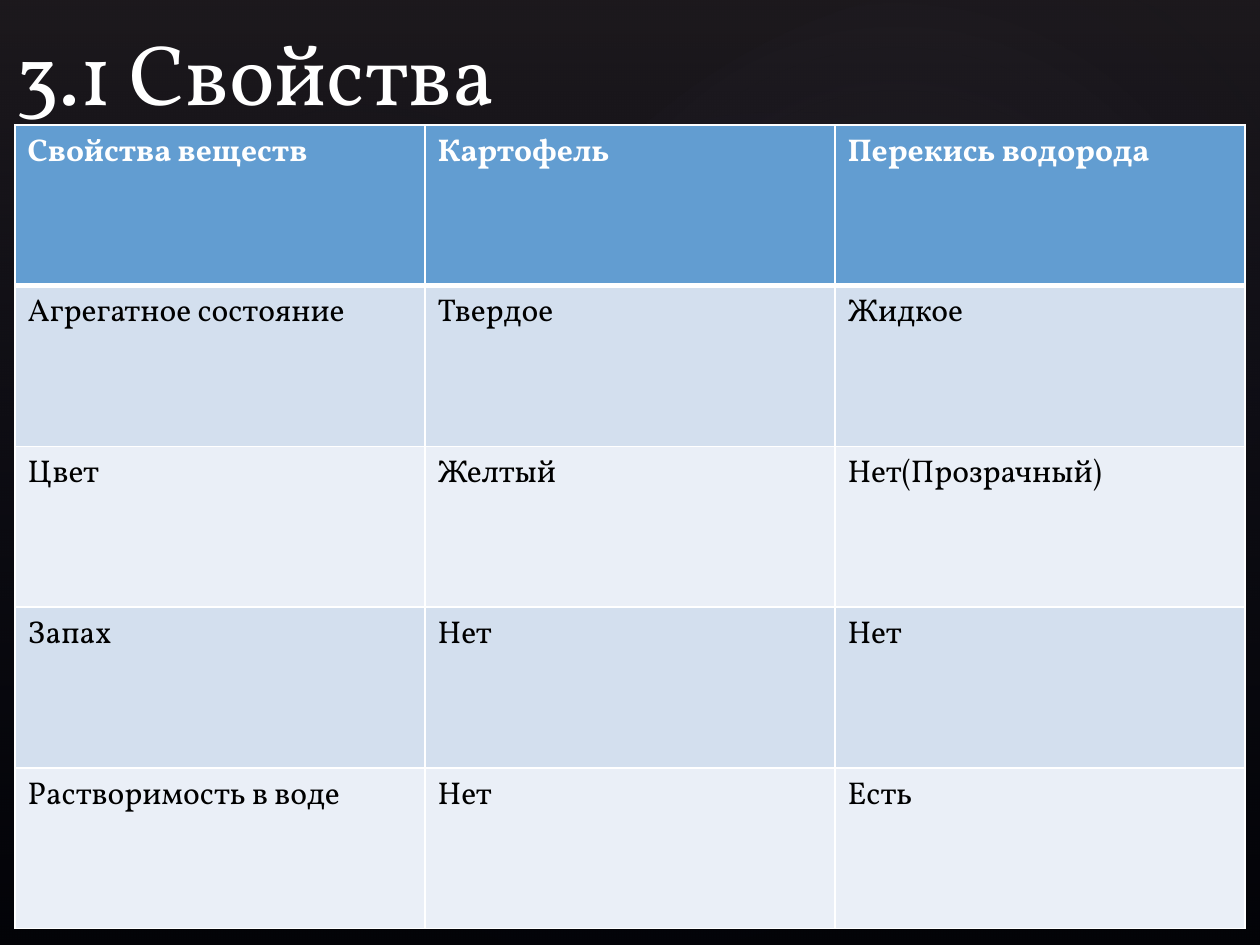
from lxml import etree
from pptx import Presentation
from pptx.dml.color import RGBColor
from pptx.enum.shapes import MSO_SHAPE
from pptx.enum.text import MSO_ANCHOR, MSO_AUTO_SIZE, PP_ALIGN
from pptx.oxml import parse_xml
from pptx.oxml.ns import nsdecls, qn
from pptx.util import Inches, Pt

FONT = "Vollkorn"
COLORS = {
    "background": "000000", "plum": "504652", "navy": "242852", "glow": "C4BCC6",
    "header": "629DD1", "odd": "D3DFEE", "even": "EAEFF7",
    "light": "FFFFFF", "dark": "000000",
}


def set_gradient(shape, stops, direction):
    """Fill a shape with (position %, colour, opacity %) stops."""
    stop_xml = "".join(
        f'<a:gs pos="{position * 1000}"><a:srgbClr val="{COLORS[color]}">'
        f'<a:alpha val="{opacity * 1000}"/></a:srgbClr></a:gs>'
        for position, color, opacity in stops)
    shape.shadow.inherit = False
    shape.line.fill.background()
    shape.fill.background()
    properties = shape.element.spPr
    properties.replace(properties.find(qn("a:noFill")), parse_xml(
        f'<a:gradFill {nsdecls("a")} rotWithShape="1"><a:gsLst>{stop_xml}</a:gsLst>'
        f'{direction}</a:gradFill>'))


def set_borders(cell, widths):
    """Give a cell white borders; widths in points for left, right, top, bottom."""
    properties = cell._tc.get_or_add_tcPr()
    for index, (side, width) in enumerate(zip("LRTB", widths)):
        border = etree.Element(qn(f"a:ln{side}"), w=str(Pt(width)))
        solid = etree.SubElement(border, qn("a:solidFill"))
        etree.SubElement(solid, qn("a:srgbClr"), val=COLORS["light"])
        properties.insert(index, border)


prs = Presentation()
prs.slide_width, prs.slide_height = Inches(10), Inches(7.5)
slide = prs.slides.add_slide(prs.slide_layouts[5])

# Background: dark vertical fade with soft glows
slide.background.fill.solid()
slide.background.fill.fore_color.rgb = RGBColor.from_string(COLORS["background"])
fade = slide.shapes.add_shape(MSO_SHAPE.RECTANGLE, 0, 0, prs.slide_width, prs.slide_height)
set_gradient(fade, [(0, "plum", 36), (100, "navy", 10)], '<a:lin ang="5400000" scaled="0"/>')

GLOWS = [
    (1.5, 1.14, 7.92, 6.24, 328.7, 7),
    (-0.3, 1.28, 6.06, 4.9, 294.3, 8),
    (3.58, 0.13, 7.09, 5.2, 328.7, 8),
]
for *box, rotation, opacity in GLOWS:
    glow = slide.shapes.add_shape(MSO_SHAPE.OVAL, *map(Inches, box))
    glow.rotation = rotation
    set_gradient(glow, [(0, "glow", opacity), (58, "navy", 0)],
                 '<a:path path="circle"><a:fillToRect l="50000" t="50000" r="50000" b="50000"/></a:path>')

# Table of properties
ROWS = [
    ("Свойства веществ", "Картофель", "Перекись водорода"),
    ("Агрегатное состояние", "Твердое", "Жидкое"),
    ("Цвет", "Желтый", "Нет(Прозрачный)"),
    ("Запах", "Нет", "Нет"),
    ("Растворимость в воде", "Нет", "Есть"),
]
properties_table = slide.shapes.add_table(
    len(ROWS), len(ROWS[0]), Inches(0.12), Inches(0.99), Inches(9.76), Inches(6.38)).table
for r, row in enumerate(ROWS):
    is_header = r == 0
    fill_name = "header" if is_header else "odd" if r % 2 else "even"
    for c, wording in enumerate(row):
        cell = properties_table.cell(r, c)
        cell.text_frame.text = wording
        cell.fill.solid()
        cell.fill.fore_color.rgb = RGBColor.from_string(COLORS[fill_name])
        set_borders(cell, (1, 1, 3 if r == 1 else 1, 3 if is_header else 1))
        font = cell.text_frame.paragraphs[0].runs[0].font
        font.name, font.size, font.bold = FONT, Pt(18), is_header
        font.color.rgb = RGBColor.from_string(COLORS["light" if is_header else "dark"])

# Title, in front of the background and table
title = slide.shapes.title
title.element.getparent().append(title.element)
title.left, title.top, title.width, title.height = map(Inches, (0.02, 0.02, 8.25, 1))
heading = title.text_frame
heading.text = "3.1 Свойства"
heading.word_wrap = True
heading.auto_size = MSO_AUTO_SIZE.NONE
heading.vertical_anchor = MSO_ANCHOR.BOTTOM
heading.paragraphs[0].alignment = PP_ALIGN.LEFT
heading_font = heading.paragraphs[0].runs[0].font
heading_font.name, heading_font.size = FONT, Pt(49)
heading_font.color.rgb = RGBColor.from_string(COLORS["light"])

prs.save("out.pptx")
